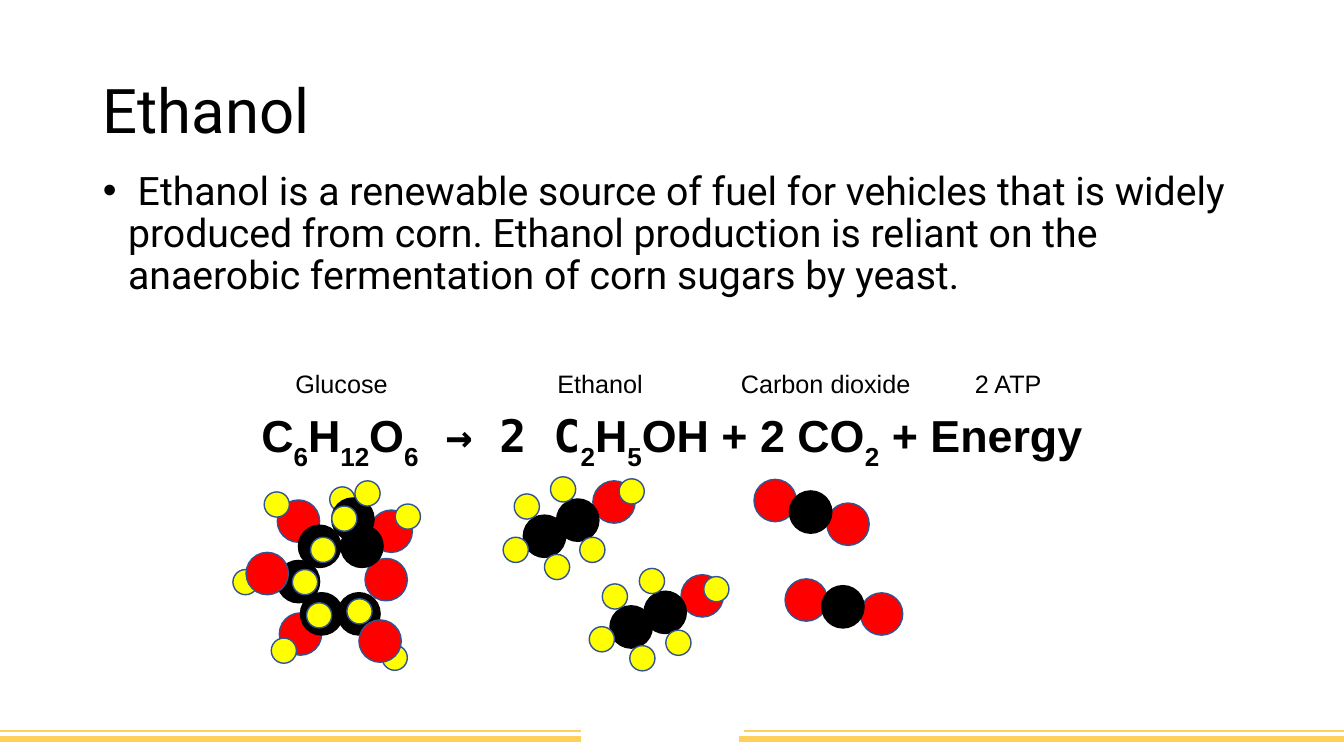
from math import cos, radians, sin

from lxml.etree import SubElement
from pptx import Presentation
from pptx.dml.color import RGBColor
from pptx.enum.shapes import MSO_CONNECTOR, MSO_SHAPE
from pptx.enum.text import MSO_ANCHOR, MSO_AUTO_SIZE, PP_ALIGN
from pptx.oxml.ns import qn
from pptx.util import Inches, Pt

COLUMNS, ROWS = 133.3, 75
COLORS = {"text": "000000", "stripe": "FFD05B", "outline": "325491",
          "C": "000000", "O": "FF0000", "H": "FFFF00"}
DIAMETERS = {"C": 4.2, "O": 4.2, "H": 2.5}

# Atoms from back to front: element, columns and rows from the molecule's origin
CARBON_DIOXIDE = [("O", -3.7, 0), ("O", 3.9, 0), ("C", 0, 0)]
ETHANOL = [
    ("C", 0, 0), ("O", 6.9, -3.4), ("C", 3.3, -1.6),
    ("H", 4.75, 1.35), ("H", 1.25, 3.05), ("H", -2.85, 1.35),
    ("H", -1.75, -2.95), ("H", 1.85, -4.65),
]
GLUCOSE = [
    ("O", 5.8, -4.3), ("O", -3.4, -5.3), ("O", -3.2, 5.9), ("C", -1.1, 3.9),
    ("O", 5.3, 0.5), ("C", 2.6, 3.9), ("H", -4.85, 7.55), ("H", 6.15, 8.25),
    ("H", -1.35, 4.05), ("H", -8.65, 0.75), ("H", -5.55, -6.95),
    ("H", 7.45, -5.75), ("C", -3.4, 0.7), ("C", -1.3, -2.8),
    ("C", 2.9, -2.8), ("O", -6.5, -0.1), ("H", -2.75, 0.75),
    ("H", 0.95, -7.45), ("H", -0.95, -2.45), ("H", 2.65, 3.65),
    ("O", 4.7, 6.6), ("C", 2, -5.5), ("H", 1.15, -5.55), ("H", 3.45, -8.05),
]
# Origin column and row, clockwise turn in degrees, atoms
MOLECULES = [
    (80.4, 50.8, 18, CARBON_DIOXIDE),
    (83.6, 60.2, 10.5, CARBON_DIOXIDE),
    (54, 53.2, 0, ETHANOL + [("H", 8.65, -4.45)]),
    (62.6, 62.2, 2.6, ETHANOL + [("H", 8.27, -4.13)]),
    (33, 57, 0, GLUCOSE),
]
LABELS = [("Glucose", 28.3, 14.2), ("Ethanol", 54.3, 12.6),
          ("Carbon dioxide", 72.5, 25.7), ("2 ATP", 95.7, 9)]
# Text and the subscript that follows it
EQUATION = [("C", "6"), ("H", "12"), ("O", "6"), (" → 2 C", "2"),
            ("H", "5"), ("OH + 2 CO", "2"), (" + Energy", "")]


def write(paragraph, text, size=18, font="Arial", bold=False, subscript=False):
    run = paragraph.add_run()
    run.text = text
    run.font.size = Pt(size)
    run.font.name = font
    run.font.bold = bold
    run.font.color.rgb = RGBColor.from_string(COLORS["text"])
    if subscript:
        run._r.get_or_add_rPr().set("baseline", "-30000")


def cells(*lengths):
    return [Inches(length / 10) for length in lengths]


class EthanolSlide:
    """Slide measured in square cells, with the style of its elements."""

    def __init__(self, presentation):
        presentation.slide_width, presentation.slide_height = cells(COLUMNS, ROWS)
        self.slide = presentation.slides.add_slide(presentation.slide_layouts[1])
        self.shapes = self.slide.shapes

    def stripe(self, start, end, row, weight):
        line = self.shapes.add_connector(
            MSO_CONNECTOR.STRAIGHT, *cells(start, row, end, row))
        line.line.color.rgb = RGBColor.from_string(COLORS["stripe"])
        line.line.width = Pt(weight)
        SubElement(line._element.spPr, qn("a:effectLst"))

    def placeholder(self, index, text, area, size, anchor, bullet=False):
        holder = self.slide.placeholders[index]
        holder.left, holder.top, holder.width, holder.height = cells(*area)
        frame = holder.text_frame
        frame.auto_size = MSO_AUTO_SIZE.NONE
        frame.vertical_anchor = anchor
        paragraph = frame.paragraphs[0]
        if bullet:
            properties = paragraph._p.get_or_add_pPr()
            properties.set("marL", str(Inches(0.25)))
            properties.set("indent", str(-Inches(0.25)))
            SubElement(properties, qn("a:buFont"), typeface="Arial")
            SubElement(properties, qn("a:buChar"), char="•")
        paragraph.alignment = PP_ALIGN.LEFT
        paragraph.line_spacing = 0.9
        paragraph.space_before = Pt(0)
        write(paragraph, text, size=size, font="Roboto")

    def text_line(self, area, alignment=PP_ALIGN.LEFT):
        """Add a text box and return its paragraph."""
        frame = self.shapes.add_textbox(*cells(*area)).text_frame
        frame.word_wrap = True
        paragraph = frame.paragraphs[0]
        paragraph.alignment = alignment
        return paragraph

    def atom(self, group, element, column, row):
        size = DIAMETERS[element]
        ball = group.shapes.add_shape(
            MSO_SHAPE.OVAL, *cells(column - size / 2, row - size / 2, size, size))
        ball.shadow.inherit = False
        ball.fill.solid()
        ball.fill.fore_color.rgb = RGBColor.from_string(COLORS[element])
        outline = "C" if element == "C" else "outline"
        ball.line.color.rgb = RGBColor.from_string(COLORS[outline])
        ball.line.width = Pt(1)

    def molecule(self, column, row, turn, atoms):
        group = self.shapes.add_group_shape()
        across, down = cos(radians(turn)), sin(radians(turn))
        for element, x, y in atoms:
            self.atom(group, element, column + x * across - y * down,
                      row + x * down + y * across)


def main():
    presentation = Presentation()
    page = EthanolSlide(presentation)

    for row, weight, right_start in ((73.3, 4.5, 73.3), (72.5, 1.5, 73.8)):
        page.stripe(0, 57.6, row, weight)
        page.stripe(right_start, COLUMNS, row, weight)

    page.placeholder(0, "Ethanol", (9.2, 4, 115, 14.5), 44, MSO_ANCHOR.MIDDLE)
    page.placeholder(
        1, " Ethanol is a renewable source of fuel for vehicles that is widely "
        "produced from corn. Ethanol production is reliant on the anaerobic "
        "fermentation of corn sugars by yeast.",
        (9.2, 16.5, 115, 51.1), 28, MSO_ANCHOR.TOP, bullet=True)

    for name, column, width in LABELS:
        write(page.text_line((column, 36.1, width, 4)), name)

    equation = page.text_line((24, 40, COLUMNS - 48, 6.2), PP_ALIGN.CENTER)
    for text, subscript in EQUATION:
        font = "DejaVu Sans Mono" if "→" in text else "Arial"
        write(equation, text, size=32, font=font, bold=True)
        if subscript:
            write(equation, subscript, size=32, bold=True, subscript=True)

    for molecule in MOLECULES:
        page.molecule(*molecule)

    presentation.save("out.pptx")


if __name__ == "__main__":
    main()
